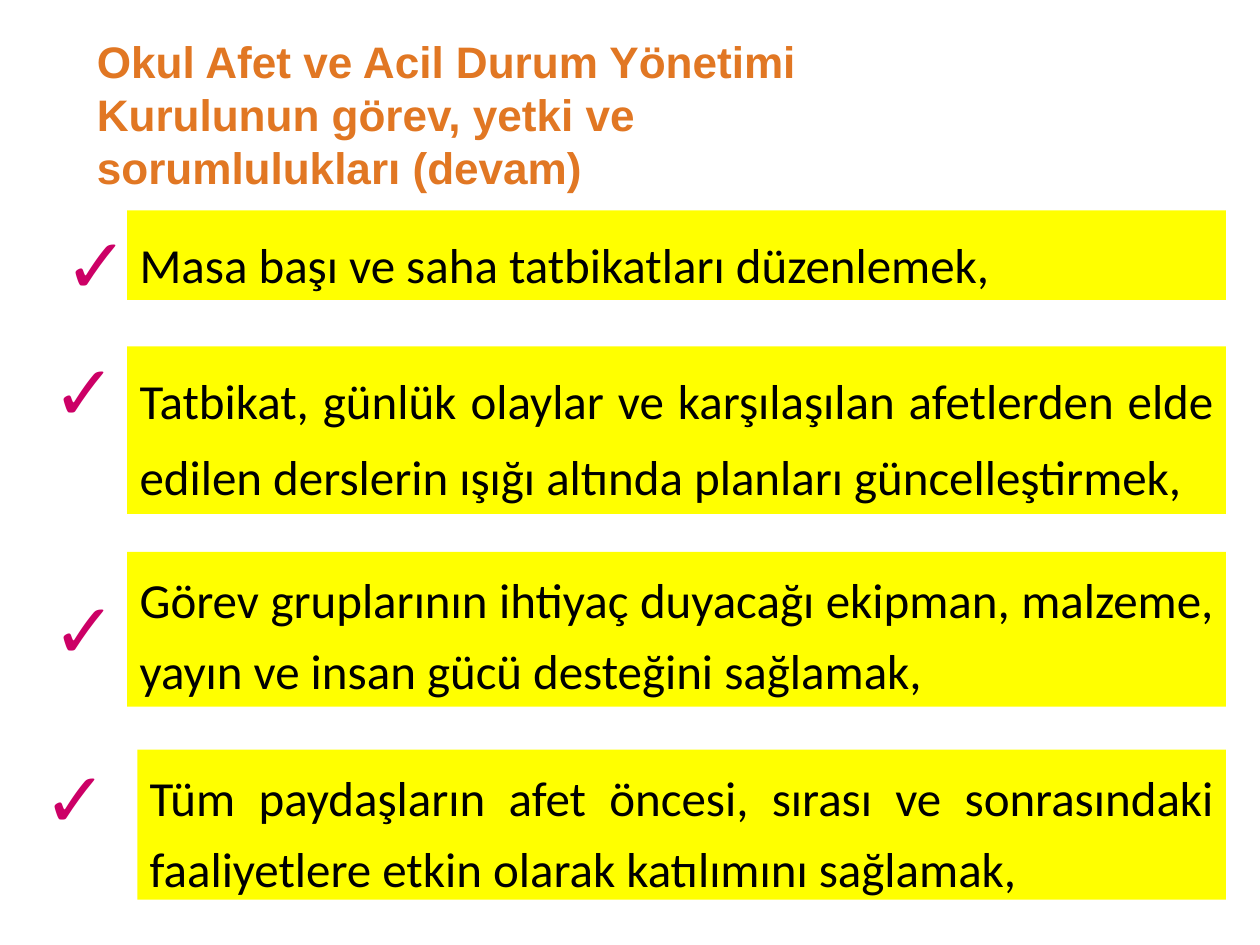
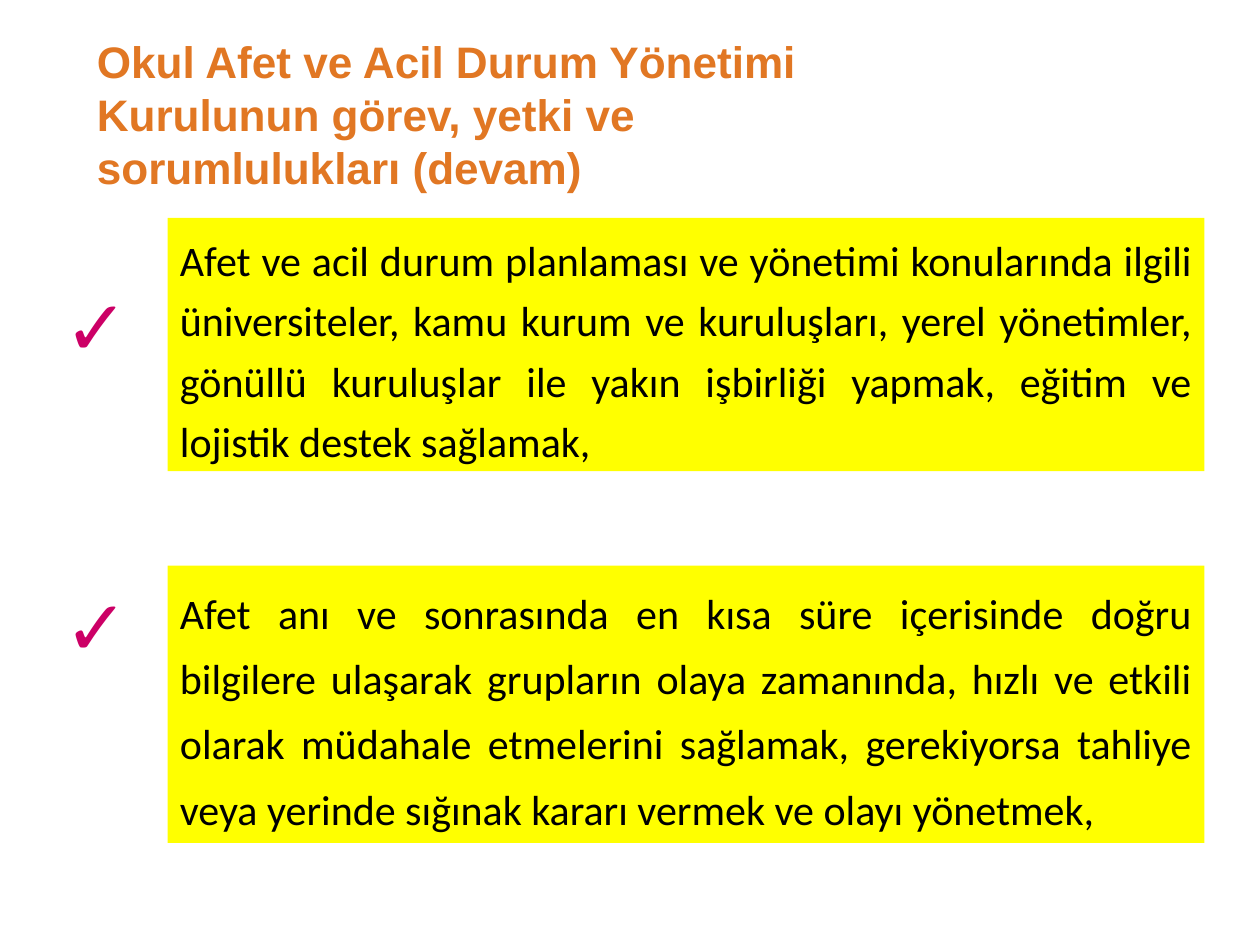
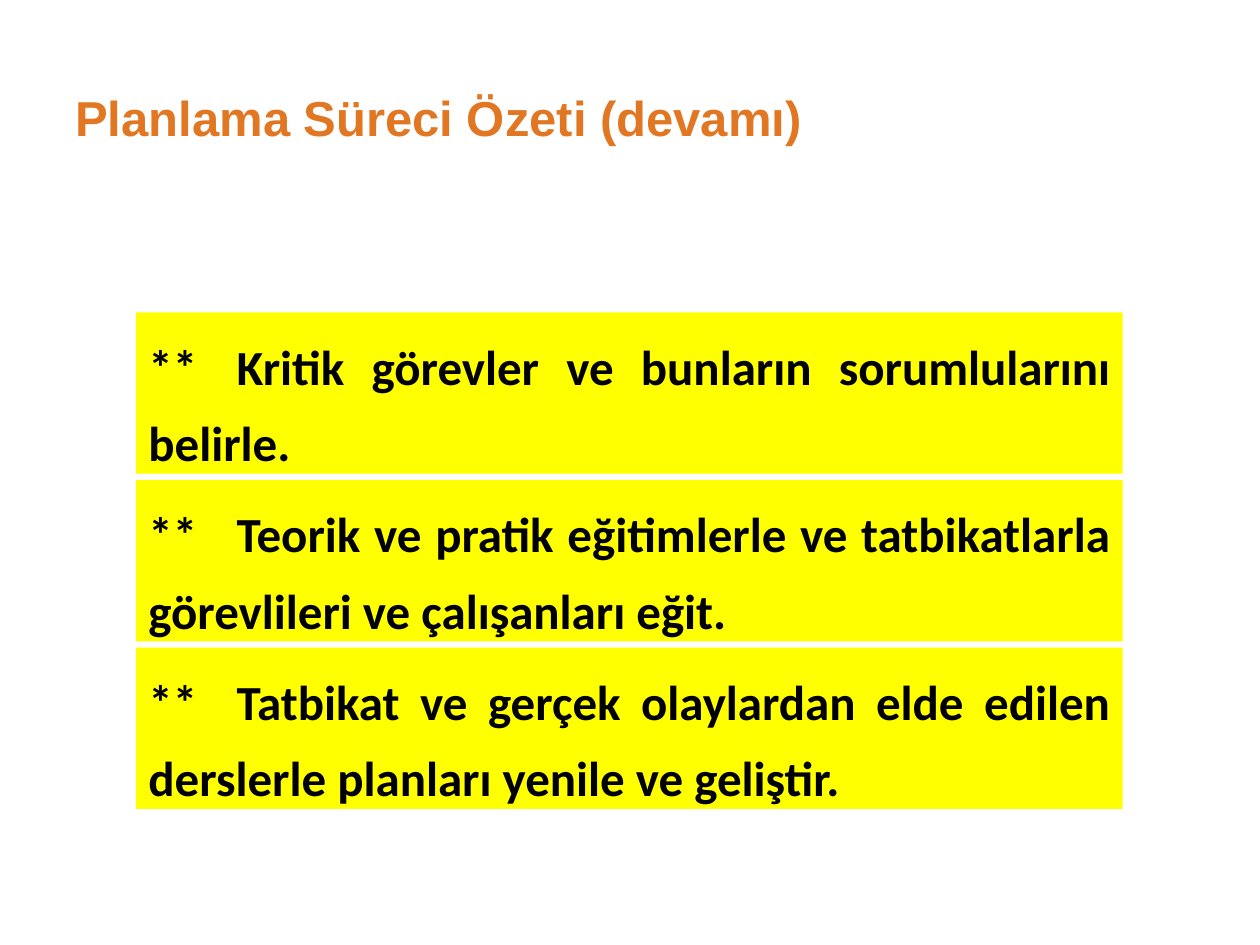
from dataclasses import dataclass

import pptx
import pptx.dml.color
import pptx.enum.shapes
import pptx.enum.text
import pptx.oxml.ns
import pptx.util
from lxml import etree
from pptx.util import Inches

ALIGN = pptx.enum.text.PP_ALIGN
ANCHOR = pptx.enum.text.MSO_ANCHOR
AUTO_SIZE = pptx.enum.text.MSO_AUTO_SIZE


@dataclass(frozen=True)
class Theme:
    heading: str = "E17723"
    check: str = "CC0066"
    panel: str = "FFFF00"
    ink: str = "000000"
    heading_font: str = "Arial"
    body_font: str = "Calibri"
    heading_size: float = 25.2
    summary_heading_size: float = 28
    check_size: float = 44
    large_size: float = 28
    medium_size: float = 24


THEME = Theme()
DUTIES_HEADING = "Okul Afet ve Acil Durum Yönetimi Kurulunun görev, yetki ve sorumlulukları (devam)"

FIRST_DUTIES = [
    ("Masa başı ve saha tatbikatları düzenlemek,",
     (1.01, 1.67, 8.72, 0.71), (-0.6, 0), 1.3),
    ("Tatbikat, günlük olaylar ve karşılaşılan afetlerden elde edilen derslerin ışığı altında planları güncelleştirmek,",
     (1.01, 2.75, 8.72, 1.33), (-0.69, -0.07), 1.3),
    ("Görev gruplarının ihtiyaç duyacağı ekipman, malzeme, yayın ve insan gücü desteğini sağlamak,",
     (1.01, 4.38, 8.72, 1.23), (-0.69, 0.19), 1.2),
    ("Tüm paydaşların afet öncesi, sırası ve sonrasındaki faaliyetlere etkin olarak katılımını sağlamak,",
     (1.09, 5.95, 8.64, 1.19), (-0.84, -0.04), 1.2),
]
LAST_DUTIES = [
    ("Afet ve acil durum planlaması ve yönetimi konularında ilgili üniversiteler, kamu kurum ve kuruluşları, "
     "yerel yönetimler, gönüllü kuruluşlar ile yakın işbirliği yapmak, eğitim ve lojistik destek sağlamak,",
     (1.33, 1.73, 8.23, 2.01), (-0.92, 0.43), 1.2),
    ("Afet anı ve sonrasında en kısa süre içerisinde doğru bilgilere ulaşarak grupların olaya zamanında, "
     "hızlı ve etkili olarak müdahale etmelerini sağlamak, gerekiyorsa tahliye veya yerinde sığınak kararı "
     "vermek ve olayı yönetmek,",
     (1.33, 4.49, 8.23, 2.2), (-0.92, 0.05), 1.3),
]
SUMMARY_STEPS = [
    "Kritik görevler ve bunların sorumlularını belirle.",
    "Teorik ve pratik eğitimlerle ve tatbikatlarla görevlileri ve çalışanları eğit.",
    "Tatbikat ve gerçek olaylardan elde edilen derslerle planları yenile ve geliştir.",
]


def rgb(value):
    return pptx.dml.color.RGBColor.from_string(value)


def add_text(slide, text, box, *, size, color=THEME.ink, font=THEME.body_font, bold=False,
             fill=None, align=ALIGN.LEFT, anchor=ANCHOR.TOP, spacing=None, wrap=True,
             grow=True, tab=None):
    place = [Inches(length) for length in box]
    if fill:
        holder = slide.shapes.add_shape(pptx.enum.shapes.MSO_SHAPE.RECTANGLE, *place)
        holder.shadow.inherit = False
        holder.fill.solid()
        holder.fill.fore_color.rgb = rgb(fill)
        holder.line.fill.background()
    else:
        holder = slide.shapes.add_textbox(*place)
    frame = holder.text_frame
    frame.word_wrap = wrap
    frame.vertical_anchor = anchor
    frame.auto_size = AUTO_SIZE.SHAPE_TO_FIT_TEXT if grow else AUTO_SIZE.NONE
    paragraph = frame.paragraphs[0]
    paragraph.alignment = align
    if spacing:
        paragraph.line_spacing = spacing
    if tab:
        qn = pptx.oxml.ns.qn
        stops = etree.SubElement(paragraph._p.get_or_add_pPr(), qn("a:tabLst"))
        etree.SubElement(stops, qn("a:tab"), pos=str(Inches(tab)), algn="l")
    run = paragraph.add_run()
    run.text = text
    run.font.size = pptx.util.Pt(size)
    run.font.name = font
    run.font.bold = bold
    run.font.color.rgb = rgb(color)


def add_heading(slide, text, left, top, size):
    add_text(slide, text, (left, top, 6.08, 1.25), size=size, color=THEME.heading,
             font=THEME.heading_font, bold=True, anchor=ANCHOR.MIDDLE, grow=False)


def add_panel(slide, text, box, **style):
    add_text(slide, text, box, fill=THEME.panel, align=ALIGN.JUSTIFY, **style)


def add_duty(slide, text, box, check_offset, spacing, size):
    add_panel(slide, text, box, size=size, spacing=spacing)
    left, top = box[0] + check_offset[0], box[1] + check_offset[1]
    add_text(slide, "✓", (left, top, 0.68, 0.83), size=THEME.check_size,
             color=THEME.check, anchor=ANCHOR.MIDDLE, wrap=False)


def build_duties(slide, duties, size):
    add_heading(slide, DUTIES_HEADING, 0.67, 0.28, THEME.heading_size)
    for duty in duties:
        add_duty(slide, *duty, size)


def build_summary(slide, box):
    add_heading(slide, "Planlama Süreci Özeti (devamı)", 0.5, 0.3, THEME.summary_heading_size)
    left, top, width, height = box
    pitch = 1.33
    for index, step in enumerate(SUMMARY_STEPS):
        add_panel(slide, f"**\t{step}", (left, top + index * pitch, width, height),
                  size=THEME.large_size, bold=True, spacing=1.3, tab=0.7)


def main():
    deck = pptx.Presentation()
    deck.slide_width, deck.slide_height = Inches(10), Inches(7.5)
    blank = deck.slide_layouts[6]
    build_duties(deck.slides.add_slide(blank), FIRST_DUTIES, THEME.large_size)
    build_duties(deck.slides.add_slide(blank), LAST_DUTIES, THEME.medium_size)
    build_summary(deck.slides.add_slide(blank), (1.08, 2.48, 7.83, 1.28))
    deck.save("out.pptx")


if __name__ == "__main__":
    main()
